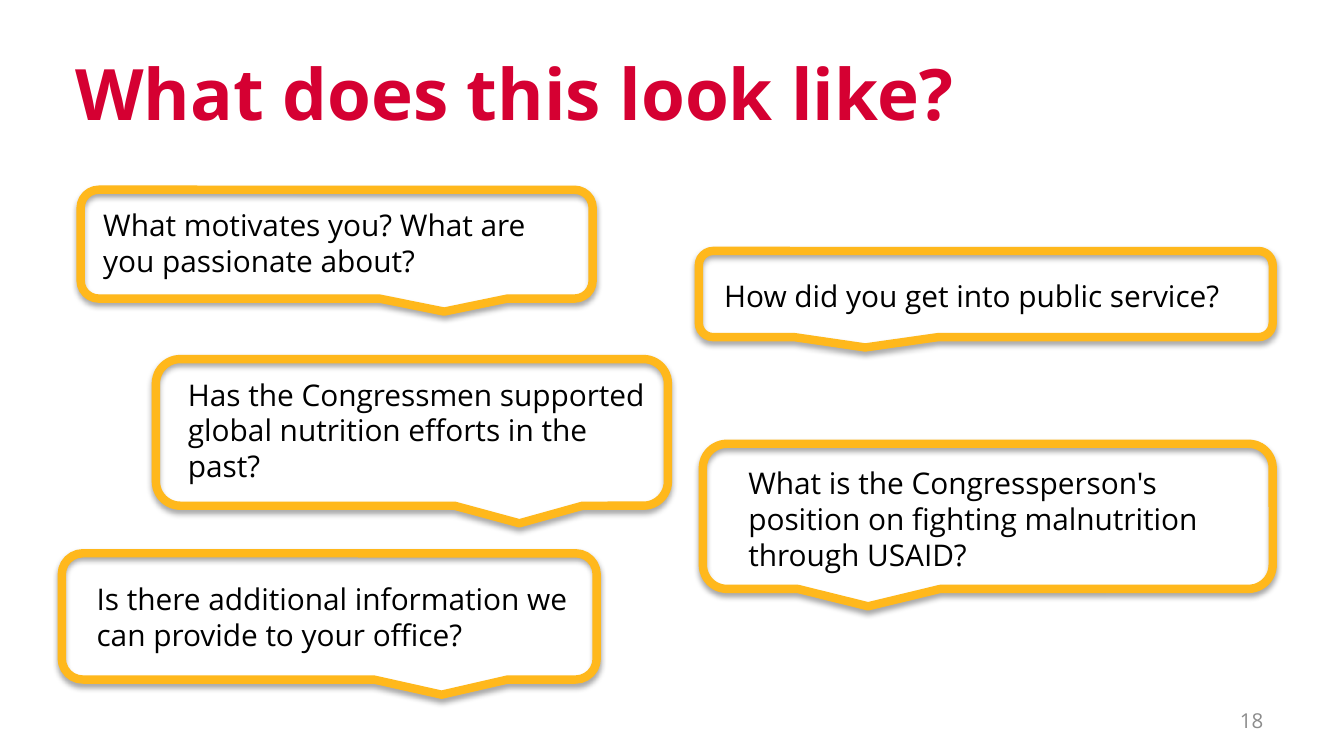
from lxml.etree import SubElement
from pptx import Presentation
from pptx.dml.color import RGBColor
from pptx.enum.shapes import MSO_SHAPE
from pptx.enum.text import MSO_ANCHOR, MSO_AUTO_SIZE, PP_ALIGN
from pptx.oxml.ns import qn
from pptx.util import Inches, Pt

RED = RGBColor(0xD5, 0x00, 0x32)
GOLD = RGBColor(0xFF, 0xB8, 0x1C)
BLACK = RGBColor(0x00, 0x00, 0x00)
GRAY = RGBColor(0x8C, 0x8C, 0x8C)
FONT = "Open Sans"

presentation = Presentation()
presentation.slide_width = Inches(10)
presentation.slide_height = presentation.slide_width * 9 // 16
COLUMN = presentation.slide_width / 100
ROW = presentation.slide_height / 100


def grid(left, top, width, height):
    return [int(left * COLUMN), int(top * ROW), int(width * COLUMN), int(height * ROW)]


def write(shape, text, size, color, bold=False, align=PP_ALIGN.LEFT, anchor=MSO_ANCHOR.TOP):
    frame = shape.text_frame
    frame.word_wrap = True
    frame.auto_size = MSO_AUTO_SIZE.NONE
    frame.vertical_anchor = anchor
    paragraph = frame.paragraphs[0]
    paragraph.alignment = align
    run = paragraph.add_run()
    run.text = text
    run.font.name = FONT
    run.font.size = Pt(size)
    run.font.bold = bold
    run.font.color.rgb = color


slide = presentation.slides.add_slide(presentation.slide_layouts[5])

title = slide.shapes.title
title.left, title.top, title.width, title.height = grid(4.6, 5.7, 69.2, 13.2)
write(title, "What does this look like?", 38, RED, bold=True)

LEFT_TAIL, RIGHT_TAIL = -0.21, 0.21
questions = [
    ("What is the Congressperson's position on fighting malnutrition through USAID?",
     (52.3, 58.7, 42.4, 19.2), (54.7, 60.6, 40.7, 16.2), LEFT_TAIL),
    ("What motivates you? What are you passionate about?",
     (6, 25.1, 38.1, 14.4), (6.7, 26.5, 36.7, 11.4), RIGHT_TAIL),
    ("How did you get into public service?",
     (52, 33.2, 42.7, 11.4), (52.9, 35.9, 40.1, 11.4), LEFT_TAIL),
    ("Is there additional information we can provide to your office?",
     (4.6, 73.2, 39.8, 16.7), (6.2, 75.9, 39.8, 11.4), RIGHT_TAIL),
    ("Has the Congressmen supported global nutrition efforts in the past?",
     (11.6, 47.5, 38.1, 19.4), (13, 48.9, 36.7, 21), RIGHT_TAIL),
]

for question, bubble_area, text_area, tail in questions:
    group = slide.shapes.add_group_shape()
    bubble = group.shapes.add_shape(MSO_SHAPE.ROUNDED_RECTANGULAR_CALLOUT, *grid(*bubble_area))
    bubble.adjustments[0] = tail
    bubble.adjustments[1] = 0.62
    bubble.fill.background()
    bubble.line.color.rgb = GOLD
    bubble.line.width = Pt(4.5)
    bubble.shadow.inherit = False
    effects = bubble.element.spPr.find(qn("a:effectLst"))
    shadow = SubElement(effects, qn("a:outerShdw"), blurRad=str(Pt(3.1)), dist=str(Pt(1.8)),
                        dir="5400000", rotWithShape="0")
    shadow_color = SubElement(shadow, qn("a:srgbClr"), val=str(BLACK))
    SubElement(shadow_color, qn("a:alpha"), val="35000")
    write(group.shapes.add_textbox(*grid(*text_area)), question, 16, BLACK)

page_number = slide.shapes.add_textbox(*grid(71.7, 92.6, 23.3, 5.3))
write(page_number, "18", 11, GRAY, align=PP_ALIGN.RIGHT, anchor=MSO_ANCHOR.MIDDLE)

presentation.save("out.pptx")
